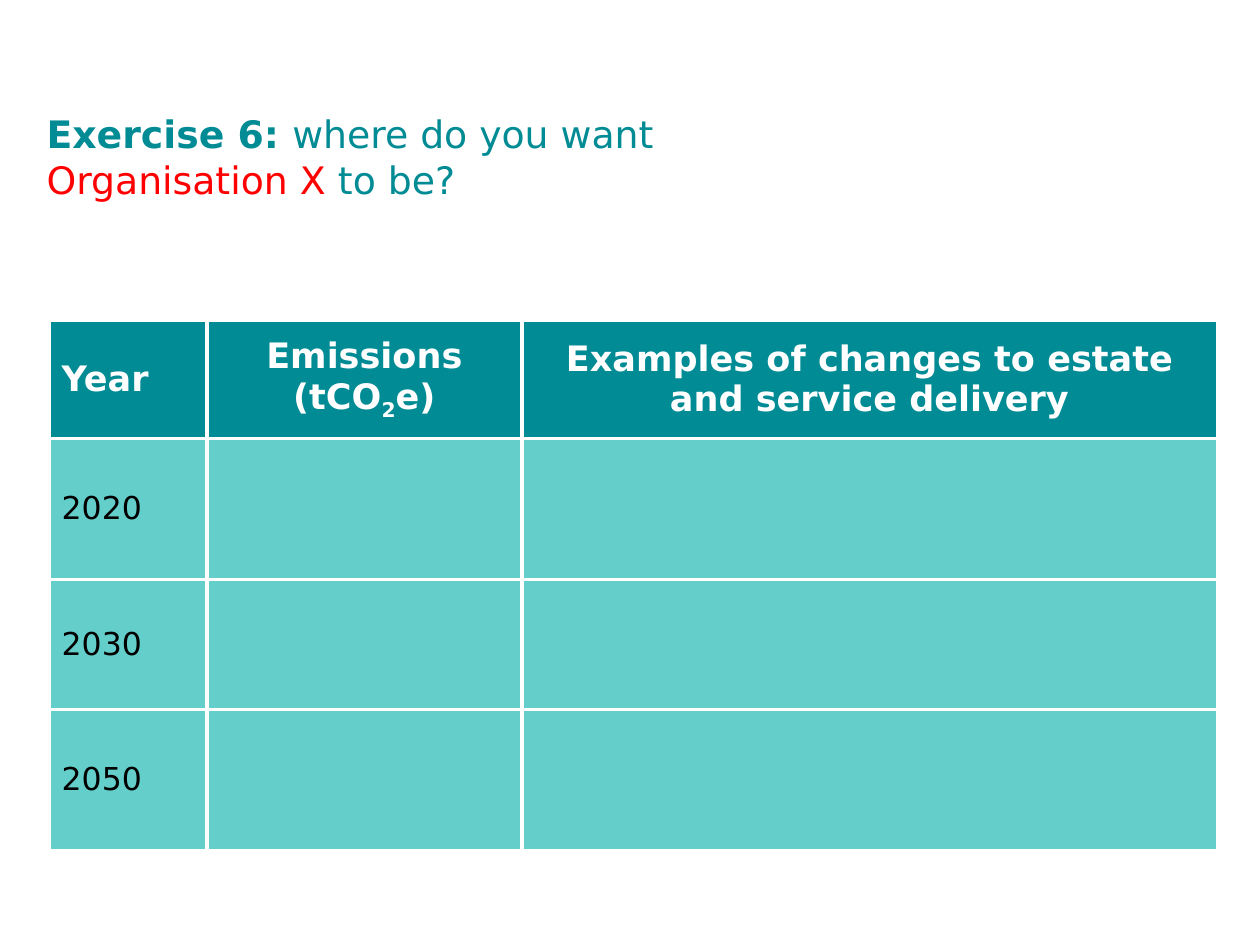
from lxml import etree
from pptx import Presentation
from pptx.dml.color import RGBColor
from pptx.enum.text import MSO_ANCHOR, PP_ALIGN
from pptx.oxml.ns import qn
from pptx.util import Cm, Pt

MIDDLE = MSO_ANCHOR.MIDDLE
LEFT, CENTER = PP_ALIGN.LEFT, PP_ALIGN.CENTER
FONT = "DejaVu Sans"
COLORS = {"teal": "008B95", "aqua": "63CECA", "red": "FF0000",
          "white": "FFFFFF", "black": "000000"}


def add_run(para, text, size, color, bold=False):
    run = para.add_run()
    run.text = text
    run.font.name = FONT
    run.font.size = Pt(size)
    run.font.bold = bold
    run.font.color.rgb = RGBColor.from_string(COLORS[color])
    return run


def set_edges(cell, color, width):
    props = cell._tc.get_or_add_tcPr()
    for spot, side in enumerate(("lnL", "lnR", "lnT", "lnB")):
        line = etree.Element(qn("a:" + side), w=str(Pt(width)))
        fill = etree.SubElement(line, qn("a:solidFill"))
        etree.SubElement(fill, qn("a:srgbClr"), val=COLORS[color])
        props.insert(spot, line)


prs = Presentation()
prs.slide_width, prs.slide_height = Cm(25.4), Cm(19.05)
slide = prs.slides.add_slide(prs.slide_layouts[6])

title = slide.shapes.add_textbox(Cm(0.69), Cm(2.01), Cm(17.48), Cm(2.29))
frame = title.text_frame
frame.word_wrap = True
frame.vertical_anchor = MIDDLE
para = frame.paragraphs[0]
add_run(para, "Exercise 6: ", 21.6, "teal", True)
add_run(para, "where do you want ", 21.6, "teal")
add_run(para, "Organisation X", 21.6, "red")
add_run(para, " to be?", 21.6, "teal")

widths = [3.18, 6.35, 14.02]
heights = [2.39, 2.84, 2.62, 2.84]
heads = [["Year"], ["Emissions (tCO", "2", "e)"],
         ["Examples of changes to estate and service delivery"]]
years = ["2020", "2030", "2050"]

table = slide.shapes.add_table(
    len(heights), len(widths), Cm(0.99), Cm(6.45),
    Cm(sum(widths)), Cm(sum(heights))).table
for col, width in zip(table.columns, widths):
    col.width = Cm(width)
for row, height in zip(table.rows, heights):
    row.height = Cm(height)
for i, row in enumerate(table.rows):
    for cell in row.cells:
        cell.vertical_anchor = MIDDLE
        cell.fill.solid()
        cell.fill.fore_color.rgb = RGBColor.from_string(
            COLORS["aqua" if i else "teal"])
        set_edges(cell, "white", 2.25)

for j, parts in enumerate(heads):
    para = table.cell(0, j).text_frame.paragraphs[0]
    para.alignment = CENTER if j else LEFT
    for part in parts:
        run = add_run(para, part, 20, "white", True)
        if part == "2":
            run.font._element.set("baseline", "-25000")

for i, year in enumerate(years, 1):
    add_run(table.cell(i, 0).text_frame.paragraphs[0], year, 18, "black")

prs.save("out.pptx")
